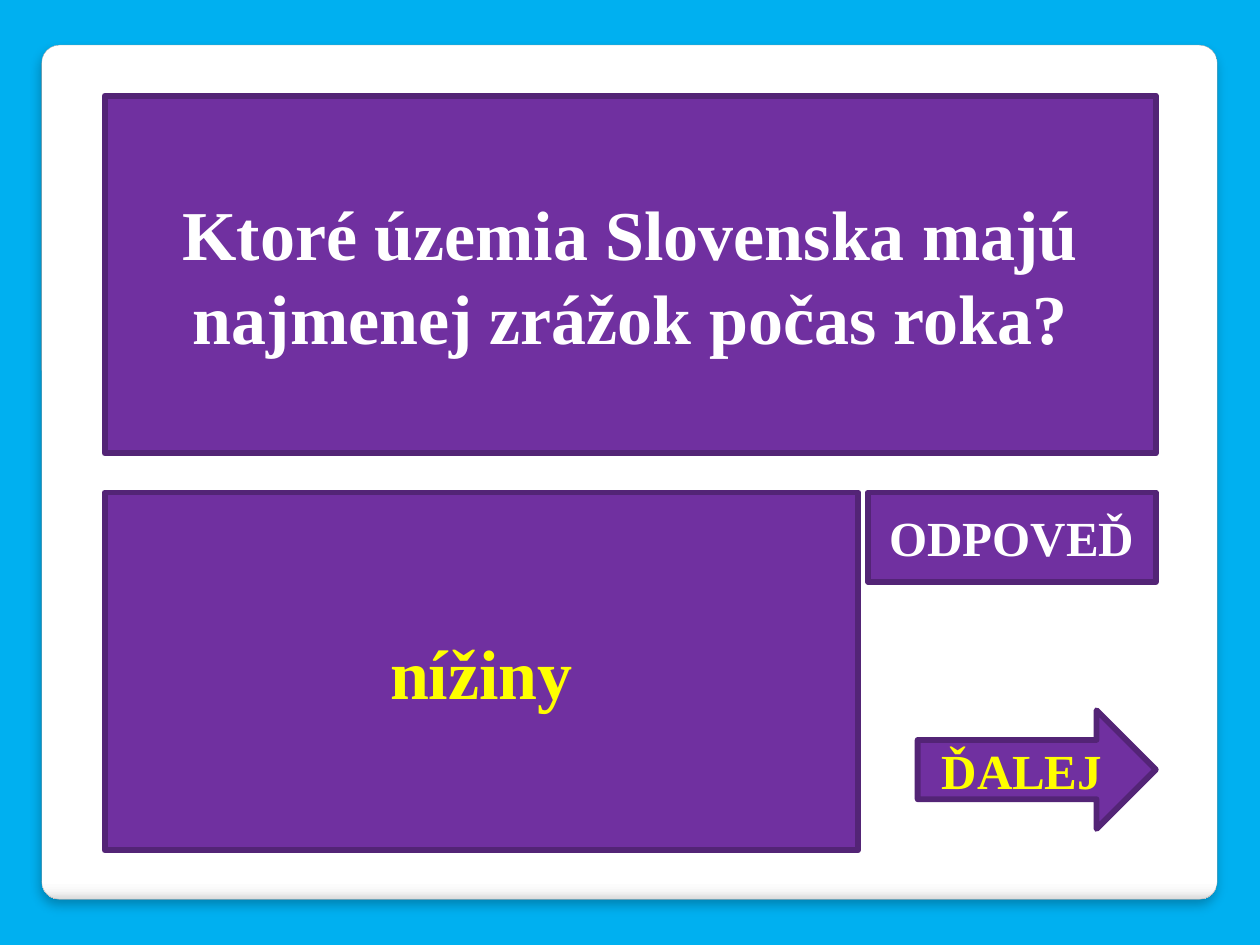
from lxml import etree
from pptx import Presentation
from pptx.dml.color import RGBColor
from pptx.enum import shapes, text
from pptx.oxml import parse_xml
from pptx.oxml.ns import qn
from pptx.util import Cm, Pt

HUES = {"sky": "00B0F0", "card": "7030A0", "edge": "532476", "rim": "A4A4A4",
        "white": "FFFFFF", "yellow": "FFFF00", "black": "000000"}
FONT = "Times New Roman"
KIND = shapes.MSO_SHAPE
LEFT, RIGHT = 2.11, 23.3
TOP, LOW = 1.93, 9.93
TALL = 7.21

# kind, left, top, width, height, wording, size, hue
CARDS = [
    (KIND.RECTANGLE, LEFT, TOP, RIGHT - LEFT, TALL,
     "Ktoré územia Slovenska majú najmenej zrážok počas roka?", 40, "white"),
    (KIND.RECTANGLE, LEFT, LOW, 15.19, TALL, "nížiny", 40, "yellow"),
    (KIND.RECTANGLE, RIGHT - 5.8, LOW, 5.8, 1.8, "ODPOVEĎ", 28, "white"),
    (KIND.RIGHT_ARROW, RIGHT - 4.8, 14.32, 4.8, 2.39, "ĎALEJ", 28, "yellow"),
]
PANEL = (0.84, 0.91, 23.7, 17.22)
STOPS = [(0, "FFFFFF"), (98, "FFFFFF"), (99, "F7F7F7"), (100, "DADADA")]
NS = 'xmlns:a="http://schemas.openxmlformats.org/drawingml/2006/main"'


def rgb(name):
    return RGBColor.from_string(HUES[name])


def put(slide, kind, box, edge, width):
    """Add a shape with an outline and no inherited shadow."""
    item = slide.shapes.add_shape(kind, *[Cm(n) for n in box])
    item.shadow.inherit = False
    item.line.color.rgb = rgb(edge)
    item.line.width = Pt(width)
    return item


def panel(slide):
    item = put(slide, KIND.ROUNDED_RECTANGLE, PANEL, "rim", 0.16)
    item.adjustments[0] = 0.021
    item.fill.gradient()
    item.fill.gradient_angle = 270
    props = item._element.spPr
    ramp = props.find(".//" + qn("a:gsLst"))
    for stop in list(ramp):
        ramp.remove(stop)
    for pos, hue in STOPS:
        ramp.append(parse_xml(
            f'<a:gs {NS} pos="{pos * 1000}"><a:srgbClr val="{hue}"/></a:gs>'))
    props.find(qn("a:effectLst")).append(parse_xml(
        f'<a:outerShdw {NS} blurRad="{Pt(6)}" dist="{Pt(4)}" dir="5400000" '
        f'algn="ctr" rotWithShape="0"><a:srgbClr val="{HUES["black"]}">'
        '<a:alpha val="25000"/></a:srgbClr></a:outerShdw>'))


def card(slide, kind, left, top, width, height, words, size, hue):
    item = put(slide, kind, (left, top, width, height), "edge", 3.35)
    item.fill.solid()
    item.fill.fore_color.rgb = rgb("card")
    etree.SubElement(item.line._get_or_add_ln(), qn("a:round"))
    frame = item.text_frame
    frame.text = words
    frame.word_wrap = True
    frame.vertical_anchor = text.MSO_ANCHOR.MIDDLE
    para = frame.paragraphs[0]
    para.alignment = text.PP_ALIGN.CENTER
    font = para.runs[0].font
    font.name, font.size, font.bold = FONT, Pt(size), True
    font.color.rgb = rgb(hue)


def main():
    deck = Presentation()
    deck.slide_width, deck.slide_height = Cm(25.4), Cm(19.05)
    slide = deck.slides.add_slide(deck.slide_layouts[6])
    back = slide.background.fill
    back.solid()
    back.fore_color.rgb = rgb("sky")
    panel(slide)
    for row in CARDS:
        card(slide, *row)
    deck.save("out.pptx")


if __name__ == "__main__":
    main()
